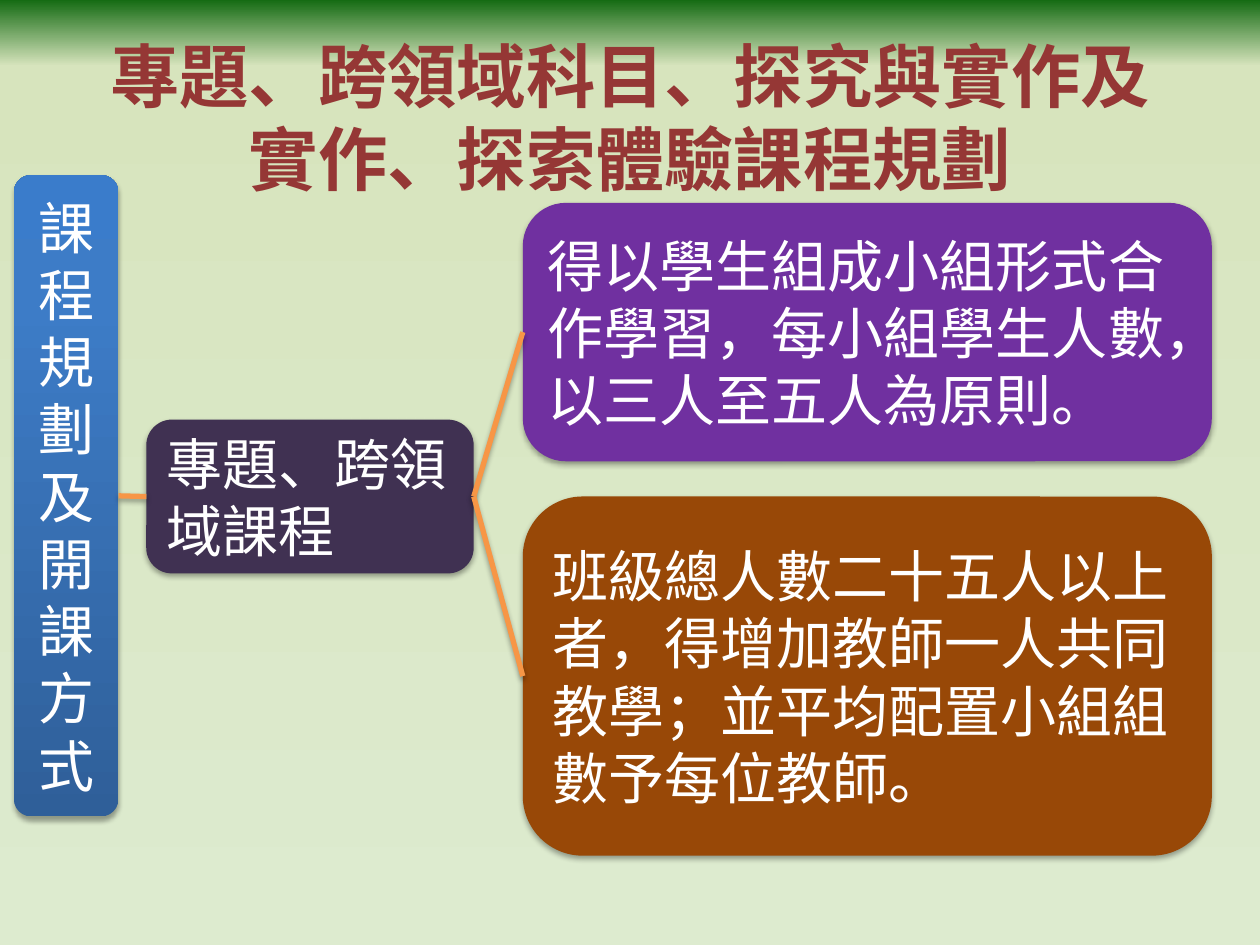
"""Build a slide with a left-to-right tree of course planning rules."""
from dataclasses import dataclass
from typing import Any

import lxml.etree
import pptx
import pptx.dml.color
import pptx.enum.shapes
import pptx.enum.text
import pptx.oxml.ns
import pptx.util

Cm = pptx.util.Cm
Pt = pptx.util.Pt
qn = pptx.oxml.ns.qn
ALIGN = pptx.enum.text.PP_ALIGN
FONT = "Noto Sans CJK SC"
WHITE = "FFFFFF"
ORANGE = "F79646"
Stops = tuple[tuple[int, str], ...]

SKY: Stops = ((0, "DDEBCF"), (93, "D7E4BD"), (100, "156B13"))
BLUE: Stops = ((0, "2F5F99"), (80, "3D7CC7"), (100, "3A7CCB"))


@dataclass
class Node:
    text: str
    left: float
    top: float
    width: float
    height: float
    fill: str | Stops
    align: Any = ALIGN.LEFT


ROOT = Node("課程規劃及開課方式", 0.28, 3.53, 2.11, 12.93, BLUE, ALIGN.CENTER)
BRANCH = Node("專題、跨領域課程", 2.95, 8.46, 6.6, 3.1, "403152")
LEAVES = [
    Node("得以學生組成小組形式合作學習，每小組學生人數，以三人至五人為原則。",
         10.54, 4.09, 13.89, 5.21, "7030A0"),
    Node("班級總人數二十五人以上者，得增加教師一人共同教學；並平均配置小組組數予每位教師。",
         10.54, 10.01, 13.89, 7.24, "984807"),
]


def rgb(value: str) -> Any:
    return pptx.dml.color.RGBColor.from_string(value)


def set_gradient(owner: Any, fill: Any, stops: Stops) -> None:
    fill.gradient()
    fill.gradient_angle = 90
    gs_lst = next(owner._element.iter(qn("a:gsLst")))
    for gs in list(gs_lst):
        gs_lst.remove(gs)
    for pos, color in stops:
        gs = lxml.etree.SubElement(gs_lst, qn("a:gs"), pos=str(pos * 1000))
        lxml.etree.SubElement(gs, qn("a:srgbClr"), val=color)


def add_shadow(sp: Any) -> None:
    effects = lxml.etree.SubElement(sp._element.spPr, qn("a:effectLst"))
    shadow = lxml.etree.SubElement(
        effects, qn("a:outerShdw"), blurRad=str(Pt(3.1)), dist=str(Pt(1.8)),
        dir="5400000", rotWithShape="0")
    color = lxml.etree.SubElement(shadow, qn("a:srgbClr"), val="000000")
    lxml.etree.SubElement(color, qn("a:alpha"), val="35000")


def write(sp: Any, text: str, *, size: float = 32, color: str = WHITE,
          bold: bool = False, align: Any = ALIGN.LEFT) -> None:
    tf = sp.text_frame
    tf.word_wrap = True
    tf.vertical_anchor = pptx.enum.text.MSO_ANCHOR.MIDDLE
    p = tf.paragraphs[0]
    p.alignment = align
    r = p.add_run()
    r.text = text
    r.font.size = Pt(size)
    r.font.bold = bold
    r.font.name = FONT
    r.font.color.rgb = rgb(color)
    lxml.etree.SubElement(r.font._element, qn("a:ea"), typeface=FONT)


def add_node(s: Any, node: Node) -> Any:
    sp = s.shapes.add_shape(
        pptx.enum.shapes.MSO_SHAPE.ROUNDED_RECTANGLE,
        Cm(node.left), Cm(node.top), Cm(node.width), Cm(node.height))
    if isinstance(node.fill, str):
        sp.fill.solid()
        sp.fill.fore_color.rgb = rgb(node.fill)
    else:
        set_gradient(sp, sp.fill, node.fill)
    sp.line.fill.background()
    add_shadow(sp)
    write(sp, node.text, align=node.align)
    return sp


def link(s: Any, parent: Any, child: Any) -> None:
    line = s.shapes.add_connector(
        pptx.enum.shapes.MSO_CONNECTOR.STRAIGHT, 0, 0, 0, 0)
    line.begin_connect(parent, 3)
    line.end_connect(child, 1)
    line.line.color.rgb = rgb(ORANGE)
    line.line.width = Pt(3)
    add_shadow(line)


def main() -> None:
    prs = pptx.Presentation()
    prs.slide_width, prs.slide_height = Cm(25.4), Cm(19.05)
    s = prs.slides.add_slide(prs.slide_layouts[6])
    set_gradient(s, s.background.fill, SKY)

    root, branch = add_node(s, ROOT), add_node(s, BRANCH)
    leaves = [add_node(s, leaf) for leaf in LEAVES]
    link(s, root, branch)
    for leaf in leaves:
        link(s, branch, leaf)

    title = s.shapes.add_textbox(Cm(1.27), Cm(0.76), Cm(22.86), Cm(3.18))
    title.text_frame.margin_left = title.text_frame.margin_right = Cm(0.3)
    write(title, "專題、跨領域科目、探究與實作及實作、探索體驗課程規劃",
          size=39.6, color="953735", bold=True, align=ALIGN.CENTER)
    prs.save("out.pptx")


if __name__ == "__main__":
    main()
